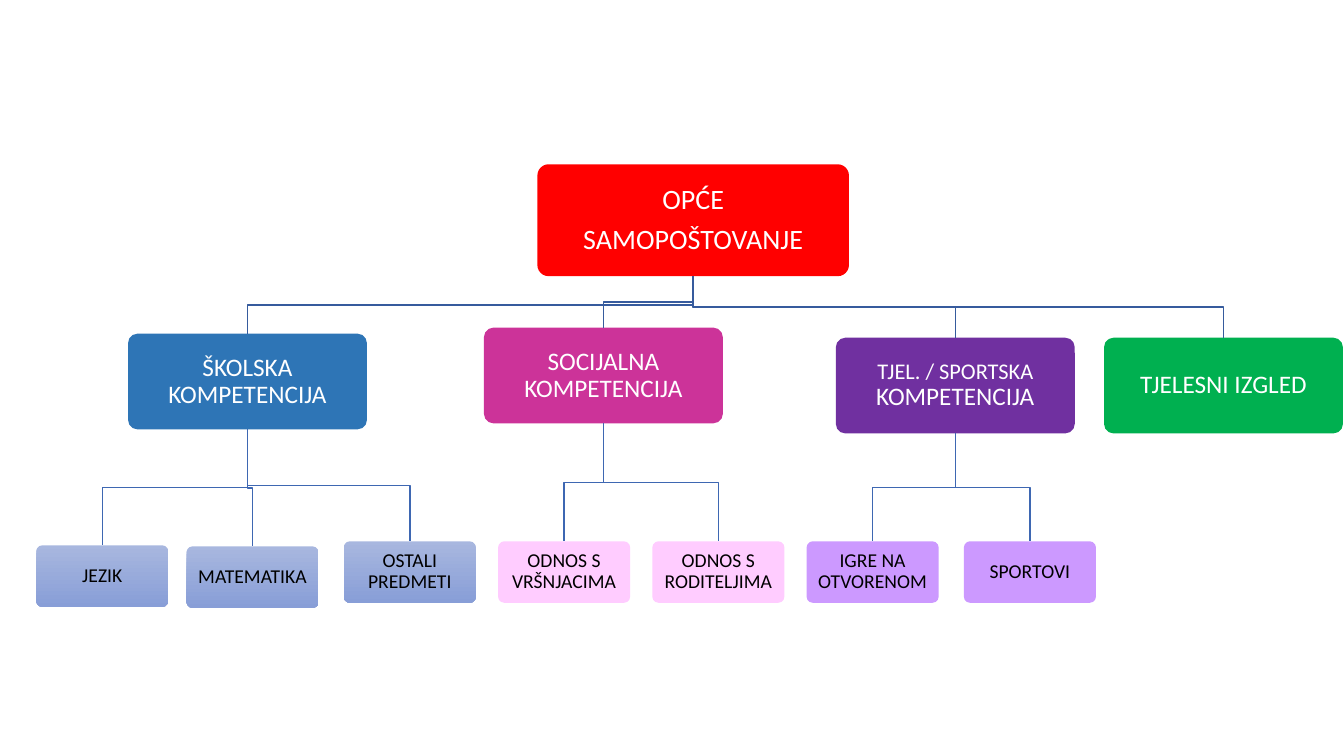
from pptx import Presentation
from pptx.dml.color import RGBColor
from pptx.enum.shapes import MSO_SHAPE
from pptx.enum.text import MSO_ANCHOR, PP_ALIGN
from pptx.util import Inches, Pt

WHITE, BLACK = "FFFFFF", "000000"
BLUES = ("A8B7DF", "889ED7")
PINK, LILAC = "FFCCFF", "CC99FF"

# Paragraphs are lists of (text, size) runs.
ROOT = (5.33, 1.63, "FF0000", [[("OPĆE", 20)], [("SAMOPOŠTOVANJE", 20)]])

# Each branch: left, top, fill, paragraphs, leaves (left, top, fill, text)
BRANCHES = [
    (1.27, 3.31, "2E75B6",
     [[("ŠKOLSKA", 18), (" ", 12), ("KOMPETENCIJA", 18)]],
     [(0.36, 5.41, BLUES, "JEZIK"),
      (1.85, 5.42, BLUES, "MATEMATIKA"),
      (3.41, 5.37, BLUES, "OSTALI PREDMETI")]),
    (4.8, 3.25, "CC3399",
     [[("SOCIJALNA KOMPETENCIJA", 18)]],
     [(4.94, 5.37, PINK, "ODNOS S VRŠNJACIMA"),
      (6.47, 5.37, PINK, "ODNOS S RODITELJIMA")]),
    (8.29, 3.35, "7030A0",
     [[("TJEL. / SPORTSKA ", 16), ("KOMPETENCIJA", 18)]],
     [(8.0, 5.37, LILAC, "IGRE NA OTVORENOM"),
      (9.56, 5.37, LILAC, "SPORTOVI")]),
    (10.95, 3.35, "00B050", [[("TJELESNI IZGLED", 18)]], []),
]

# Each level: width, height, text inset, font colour
TOP = (3.09, 1.11, 0.11, WHITE)
MID = (2.37, 0.95, 0.1, WHITE)
LOW = (1.31, 0.61, 0.08, BLACK)


def color(code):
    return RGBColor.from_string(code)


def paint(fill, tone):
    """Fill with one colour, or fade from the first to the second downwards."""
    if isinstance(tone, str):
        fill.solid()
        fill.fore_color.rgb = color(tone)
        return
    fill.gradient()
    fill.gradient_angle = 270
    for stop, code in zip(fill.gradient_stops, tone):
        stop.color.rgb = color(code)


def add_box(slide, left, top, tone, paras, level):
    wide, high, inset, ink = level
    box = slide.shapes.add_shape(MSO_SHAPE.ROUNDED_RECTANGLE, Inches(left),
                                 Inches(top), Inches(wide), Inches(high))
    box.adjustments[0] = 0.1
    box.shadow.inherit = False
    box.line.fill.background()
    paint(box.fill, tone)
    frame = box.text_frame
    frame.word_wrap = True
    frame.vertical_anchor = MSO_ANCHOR.MIDDLE
    frame.margin_left = frame.margin_right = Inches(inset)
    frame.margin_top = frame.margin_bottom = Inches(inset)
    for i, runs in enumerate(paras):
        para = frame.add_paragraph() if i else frame.paragraphs[0]
        para.alignment = PP_ALIGN.CENTER
        para.line_spacing = 0.9
        para.space_after = Pt(0.35 * runs[0][1])
        for text, size in runs:
            run = para.add_run()
            run.text = text
            run.font.name = "Calibri"
            run.font.size = Pt(size)
            run.font.color.rgb = color(ink)
    return box


def join(slide, upper, lower, code):
    """Draw a stepped line from the foot of one box to the head of another."""
    x1, y1 = upper.left + upper.width // 2, upper.top + upper.height
    x2, y2 = lower.left + lower.width // 2, lower.top
    mid = (y1 + y2) // 2
    path = slide.shapes.build_freeform(x1, y1)
    path.add_line_segments([(x1, mid), (x2, mid), (x2, y2)], close=False)
    step = path.convert_to_shape()
    step.shadow.inherit = False
    step.fill.background()
    step.line.color.rgb = color(code)
    step.line.width = Pt(1)


def main():
    deck = Presentation()
    deck.slide_width, deck.slide_height = Inches(13.33), Inches(7.5)
    slide = deck.slides.add_slide(deck.slide_layouts[6])
    root = add_box(slide, *ROOT, TOP)
    for left, top, tone, paras, leaves in BRANCHES:
        branch = add_box(slide, left, top, tone, paras, MID)
        join(slide, root, branch, "365B9D")
        for x, y, shade, text in leaves:
            leaf = add_box(slide, x, y, shade, [[(text, 14)]], LOW)
            join(slide, branch, leaf, "3E67B2")
    deck.save("out.pptx")


if __name__ == "__main__":
    main()
